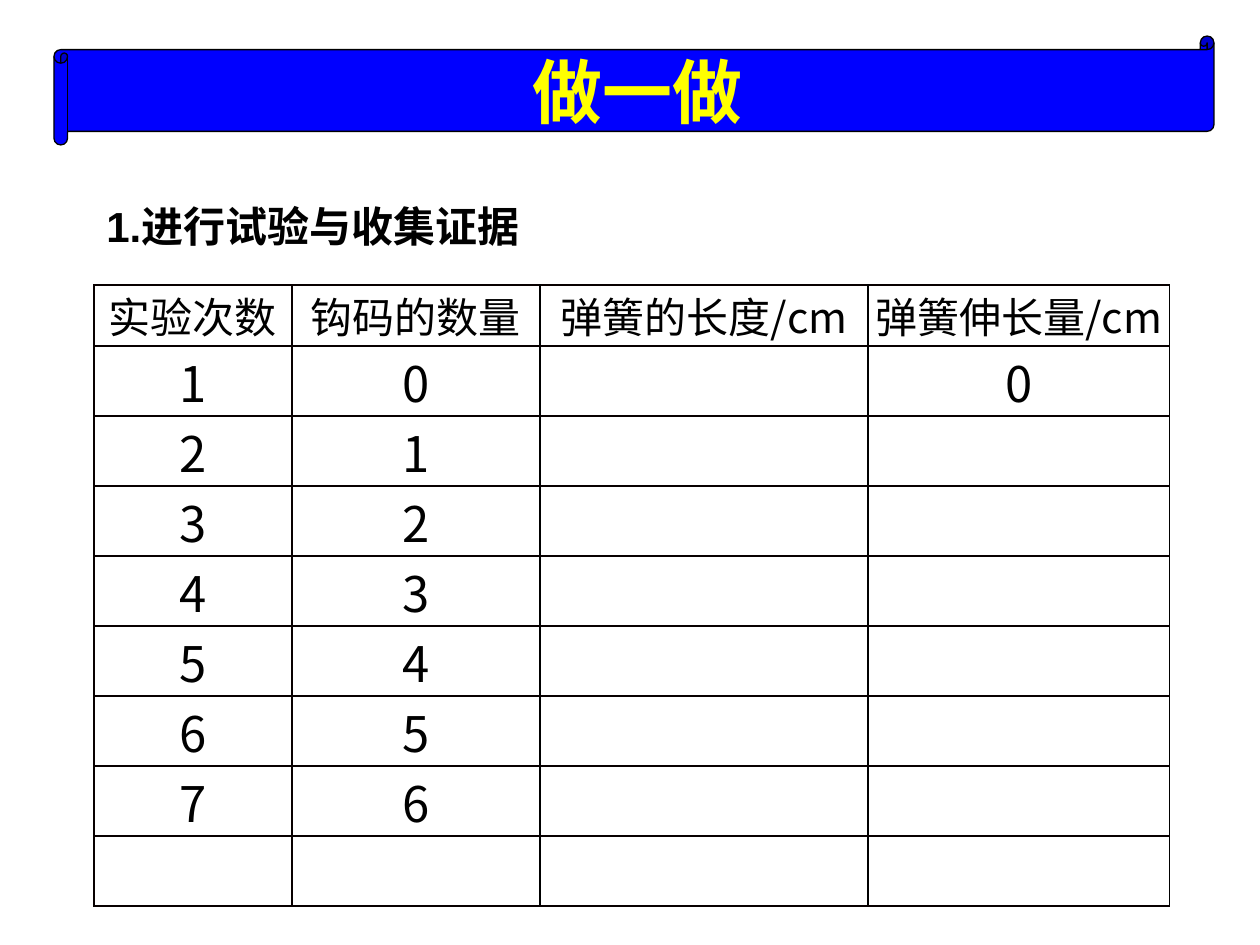
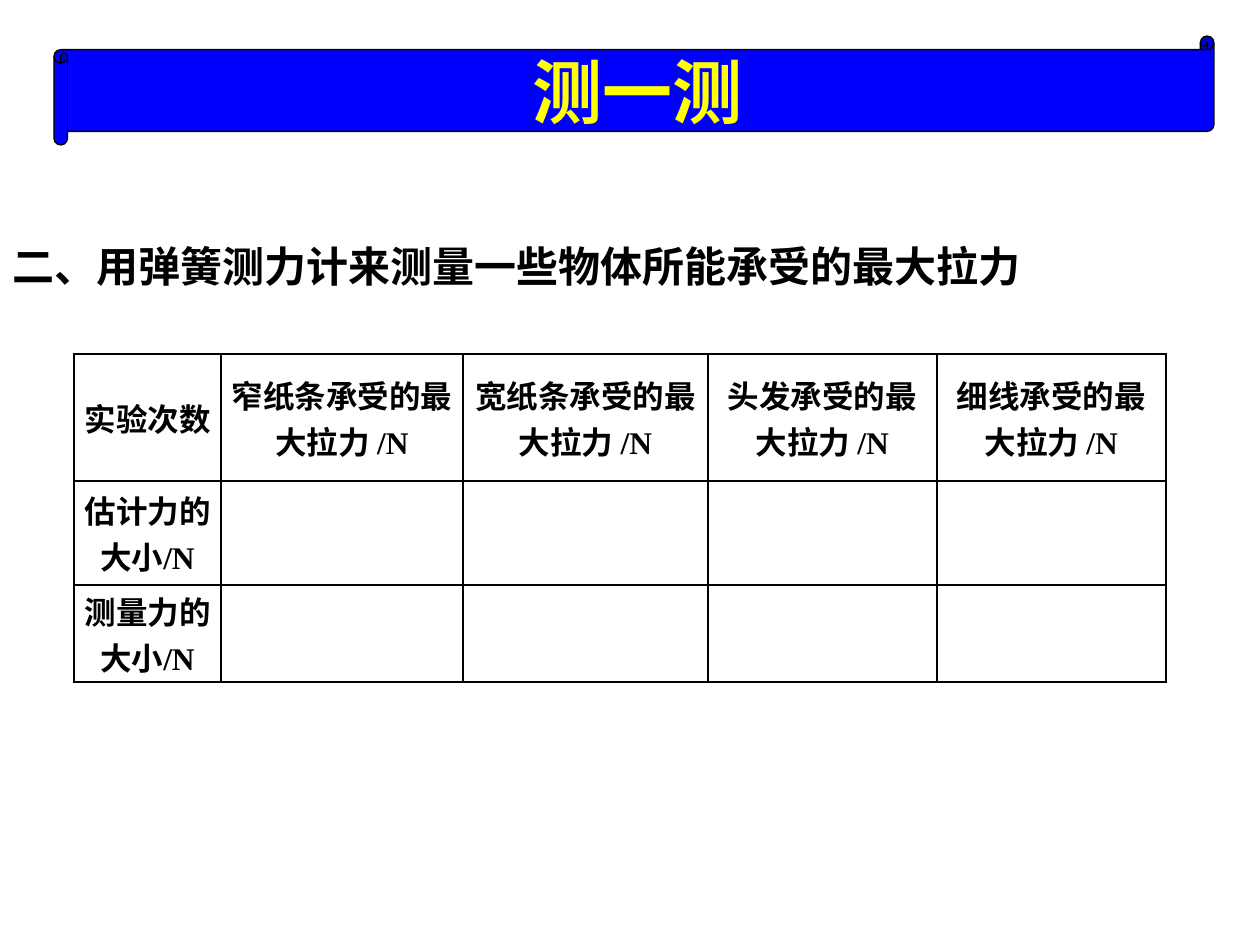
import dataclasses

import lxml.etree
import pptx
import pptx.dml.color
import pptx.enum.shapes
import pptx.enum.text
import pptx.oxml.ns
import pptx.util

ANCHOR = pptx.enum.text.MSO_ANCHOR
ALIGN = pptx.enum.text.PP_ALIGN


@dataclasses.dataclass(frozen=True)
class Theme:
    band: str = "0000FF"
    title: str = "FFFF00"
    ink: str = "000000"
    rule: str = "080000"
    han: str = "Noto Sans CJK SC"
    sans: str = "Arial"
    serif: str = "Times New Roman"
    title_size: int = 40
    digit_size: int = 28
    heading_size: int = 24
    table_size: int = 18


THEME = Theme()
THICK_RULE = (THEME.rule, 1)
THIN_RULE = (THEME.ink, 0.75)
BLACK_RULE = (THEME.ink, 1)


def px(length):
    """Turn px at 126 to the inch into EMU."""
    return pptx.util.Emu(round(length * 914400 / 126))


def colour(value):
    return pptx.dml.color.RGBColor.from_string(value)


def write(frame, text, *, size, font, ink=THEME.ink, bold=False, align=ALIGN.CENTER):
    para = frame.paragraphs[0]
    para.alignment = align
    span = para.add_run()
    span.text = text
    span.font.size = pptx.util.Pt(size)
    span.font.name = font
    span.font.bold = bold
    span.font.color.rgb = colour(ink)
    # East Asian glyphs share one typeface
    properties = span.font._element
    east_asian = lxml.etree.SubElement(properties, pptx.oxml.ns.qn("a:ea"))
    east_asian.set("typeface", THEME.han)


def set_borders(cell, sides):
    """Give a cell its left, right, top and bottom rules."""
    properties = cell._tc.get_or_add_tcPr()
    for side, (ink, width) in zip("LRTB", sides):
        line = lxml.etree.SubElement(properties, pptx.oxml.ns.qn(f"a:ln{side}"))
        line.set("w", str(pptx.util.Pt(width)))
        fill = lxml.etree.SubElement(line, pptx.oxml.ns.qn("a:solidFill"))
        lxml.etree.SubElement(fill, pptx.oxml.ns.qn("a:srgbClr")).set("val", ink)


# Title on its scroll band
def add_banner(page, text, box=(54, 36, 1160, 109)):
    left, top, width, height = box
    scroll = page.shapes.add_shape(
        pptx.enum.shapes.MSO_SHAPE.HORIZONTAL_SCROLL, *map(px, box))
    scroll.adjustments[0] = 0.125
    scroll.shadow.inherit = False
    scroll.fill.solid()
    scroll.fill.fore_color.rgb = colour(THEME.band)
    scroll.line.color.rgb = colour(THEME.ink)
    scroll.line.width = pptx.util.Pt(0.75)

    title = page.shapes.title
    roll = height // 8
    title.left, title.top = px(left + roll), px(top)
    title.width, title.height = px(width - roll * 3 // 2), px(height)
    frame = title.text_frame
    frame.auto_size = pptx.enum.text.MSO_AUTO_SIZE.NONE
    frame.vertical_anchor = ANCHOR.MIDDLE
    frame.margin_left = frame.margin_right = 0
    frame.margin_top = frame.margin_bottom = 0
    write(frame, text, size=THEME.title_size, font=THEME.han,
          ink=THEME.title, bold=True)
    # Bring the title in front of its band
    scroll._element.addnext(title._element)


# Heading above the table
def add_heading(page, text, box, font):
    heading = page.shapes.add_textbox(*map(px, box))
    frame = heading.text_frame
    frame.word_wrap = True
    frame.vertical_anchor = ANCHOR.MIDDLE
    write(frame, text, size=THEME.heading_size, font=font, bold=True,
          align=ALIGN.LEFT)


# Ruled table; uprights lists the vertical rules from left to right
def add_grid(page, rows, origin, widths, heights, *, uprights, level,
             inset, anchor, sizes, font, bold):
    box = (*origin, sum(widths), sum(heights))
    table = page.shapes.add_table(len(rows), len(widths), *map(px, box)).table
    table.first_row = table.horz_banding = False
    for column, width in zip(table.columns, widths):
        column.width = px(width)
    for row_index, texts in enumerate(rows):
        table.rows[row_index].height = px(heights[row_index])
        for column_index, text in enumerate(texts):
            cell = table.cell(row_index, column_index)
            cell.margin_left = cell.margin_right = px(inset)
            cell.margin_top = cell.margin_bottom = 0
            cell.vertical_anchor = anchor
            set_borders(cell, (*uprights[column_index:column_index + 2], level, level))
            cell.fill.background()
            if text:
                write(cell.text_frame, text, size=sizes[row_index], font=font,
                      bold=bold)


def add_spring_page(page):
    add_banner(page, "做一做")
    add_heading(page, "1.进行试验与收集证据", (94, 194, 1066, 64), THEME.sans)
    trials = [[str(count), str(count - 1), "", ""] for count in range(1, 8)]
    trials[0][3] = "0"
    header = ["实验次数", "钩码的数量", "弹簧的长度/cm", "弹簧伸长量/cm"]
    rows = [header, *trials, [""] * 4]
    add_grid(page, rows, (94, 285), (198, 248, 328, 302), [61] + [70] * 8,
             uprights=[THICK_RULE] * 2 + [THIN_RULE] * 3, level=THICK_RULE,
             inset=0, anchor=ANCHOR.TOP, font=THEME.han, bold=False,
             sizes=[THEME.heading_size] + [THEME.digit_size] * 8)


def add_force_page(page):
    add_banner(page, "测一测")
    add_heading(page, "二、用弹簧测力计来测量一些物体所能承受的最大拉力",
                (0, 234, 1260, 64), THEME.serif)
    samples = ["窄纸条", "宽纸条", "头发", "细线"]
    header = ["实验次数"] + [f"{sample}承受的最大拉力 /N" for sample in samples]
    rows = [header] + [[f"{kind}力的大小/N"] + [""] * 4 for kind in ("估计", "测量")]
    add_grid(page, rows, (74, 354), (147, 242, 245, 229, 229), (127, 104, 97),
             uprights=[BLACK_RULE] * 6, level=BLACK_RULE,
             inset=10, anchor=ANCHOR.MIDDLE, font=THEME.serif, bold=True,
             sizes=[THEME.table_size] * 3)


def main():
    deck = pptx.Presentation()
    deck.slide_width, deck.slide_height = px(1260), px(945)
    title_only = deck.slide_layouts[5]
    for fill_page in (add_spring_page, add_force_page):
        fill_page(deck.slides.add_slide(title_only))
    deck.save("out.pptx")


if __name__ == "__main__":
    main()
